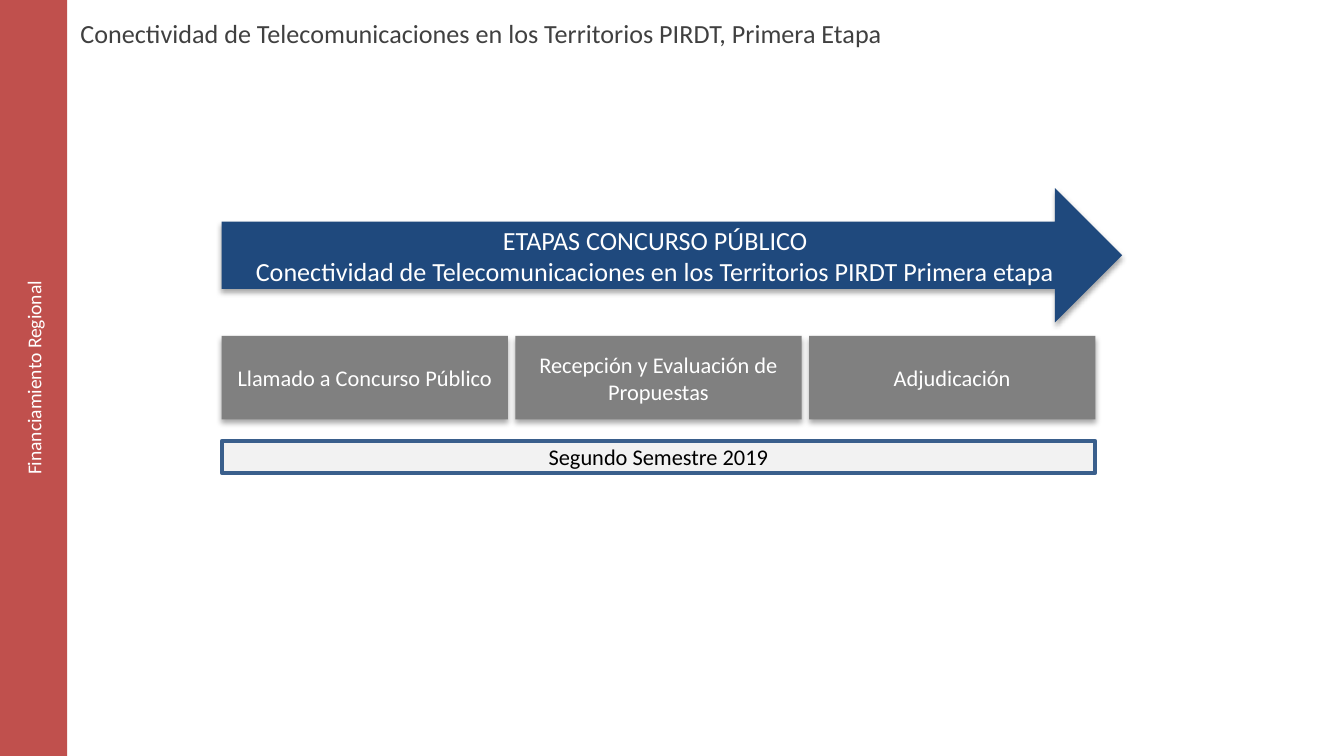
import pptx
import pptx.dml.color
import pptx.enum.shapes
import pptx.enum.text
import pptx.oxml
import pptx.oxml.ns
import pptx.util

Inches = pptx.util.Inches
Pt = pptx.util.Pt
SHAPE = pptx.enum.shapes.MSO_SHAPE
ALIGN = pptx.enum.text.PP_ALIGN
ANCHOR = pptx.enum.text.MSO_ANCHOR

COLORS = {
    "navy": "1F497D",
    "grey": "808080",
    "pale": "F2F2F2",
    "border": "3A5F8C",
    "red": "C0504D",
    "title": "404040",
    "white": "FFFFFF",
    "black": "000000",
}
STAGES = ["Llamado a Concurso Público", "Recepción y Evaluación de Propuestas", "Adjudicación"]
SLIDE_WIDTH = 10
SLIDE_HEIGHT = SLIDE_WIDTH * 9 / 16
LEFT = 1.65
TIMELINE_WIDTH = 6.5
STAGE_WIDTH = 2.13


def rgb(name):
    """Return the named colour."""
    return pptx.dml.color.RGBColor.from_string(COLORS[name])


def write(frame, text, size, color, align=ALIGN.CENTER):
    """Fill a text frame and format its runs."""
    frame.word_wrap = True
    frame.text = text
    for paragraph in frame.paragraphs:
        paragraph.alignment = align
        for run in paragraph.runs:
            run.font.name = "Calibri"
            run.font.size = Pt(size)
            run.font.color.rgb = rgb(color)


def add_block(slide, kind, box, fill, text, size, color="white"):
    """Add a filled shape with centred text and no outline."""
    block = slide.shapes.add_shape(kind, *map(Inches, box))
    block.shadow.inherit = False
    block.fill.solid()
    block.fill.fore_color.rgb = rgb(fill)
    block.line.fill.background()
    block.text_frame.vertical_anchor = ANCHOR.MIDDLE
    write(block.text_frame, text, size, color)
    return block


def add_shadow(block):
    """Give a shape a soft shadow falling straight down."""
    effects = block._element.spPr.find(pptx.oxml.ns.qn("a:effectLst"))
    effects.append(pptx.oxml.parse_xml(
        f'<a:outerShdw {pptx.oxml.ns.nsdecls("a")} blurRad="{Pt(3.1)}" dist="{Pt(1.8)}" '
        f'dir="5400000" rotWithShape="0"><a:srgbClr val="{COLORS["black"]}">'
        '<a:alpha val="35000"/></a:srgbClr></a:outerShdw>'))


def add_title(slide, text):
    """Add the slide heading."""
    heading = slide.shapes.add_textbox(Inches(0.5), Inches(0.08), Inches(8.79), Inches(0.41))
    write(heading.text_frame, text, 14, "title", ALIGN.JUSTIFY)


def add_stages(slide):
    """Add the evenly spaced row of contest stages."""
    step = (TIMELINE_WIDTH - STAGE_WIDTH) / (len(STAGES) - 1)
    for index, stage in enumerate(STAGES):
        box = (LEFT + index * step, 2.5, STAGE_WIDTH, 0.62)
        add_shadow(add_block(slide, SHAPE.RECTANGLE, box, "grey", stage, 12))


def add_period(slide, text):
    """Add the outlined bar naming the period."""
    period = add_block(slide, SHAPE.RECTANGLE, (LEFT, 3.28, TIMELINE_WIDTH, 0.24),
                       "pale", text, 12, "black")
    period.line.color.rgb = rgb("border")
    period.line.width = Pt(2)


def add_sidebar(slide, text):
    """Add the side band with text reading upwards."""
    sidebar = add_block(slide, SHAPE.RECTANGLE, (0, 0, 0.5, SLIDE_HEIGHT), "red", text, 10.5)
    sidebar.text_frame._txBody.bodyPr.set("vert", "vert270")


def main():
    """Build and save the slide."""
    deck = pptx.Presentation()
    deck.slide_width, deck.slide_height = Inches(SLIDE_WIDTH), Inches(SLIDE_HEIGHT)
    slide = deck.slides.add_slide(deck.slide_layouts[6])
    arrow = add_block(
        slide, SHAPE.RIGHT_ARROW, (LEFT, 1.4, 6.7, 1), "navy",
        "ETAPAS CONCURSO PÚBLICO\n"
        "Conectividad de Telecomunicaciones en los Territorios PIRDT Primera etapa", 14)
    add_shadow(arrow)
    add_stages(slide)
    add_title(slide, "Conectividad de Telecomunicaciones en los Territorios PIRDT, Primera Etapa")
    add_period(slide, "Segundo Semestre 2019")
    add_sidebar(slide, "Financiamiento Regional")
    deck.save("out.pptx")


if __name__ == "__main__":
    main()
